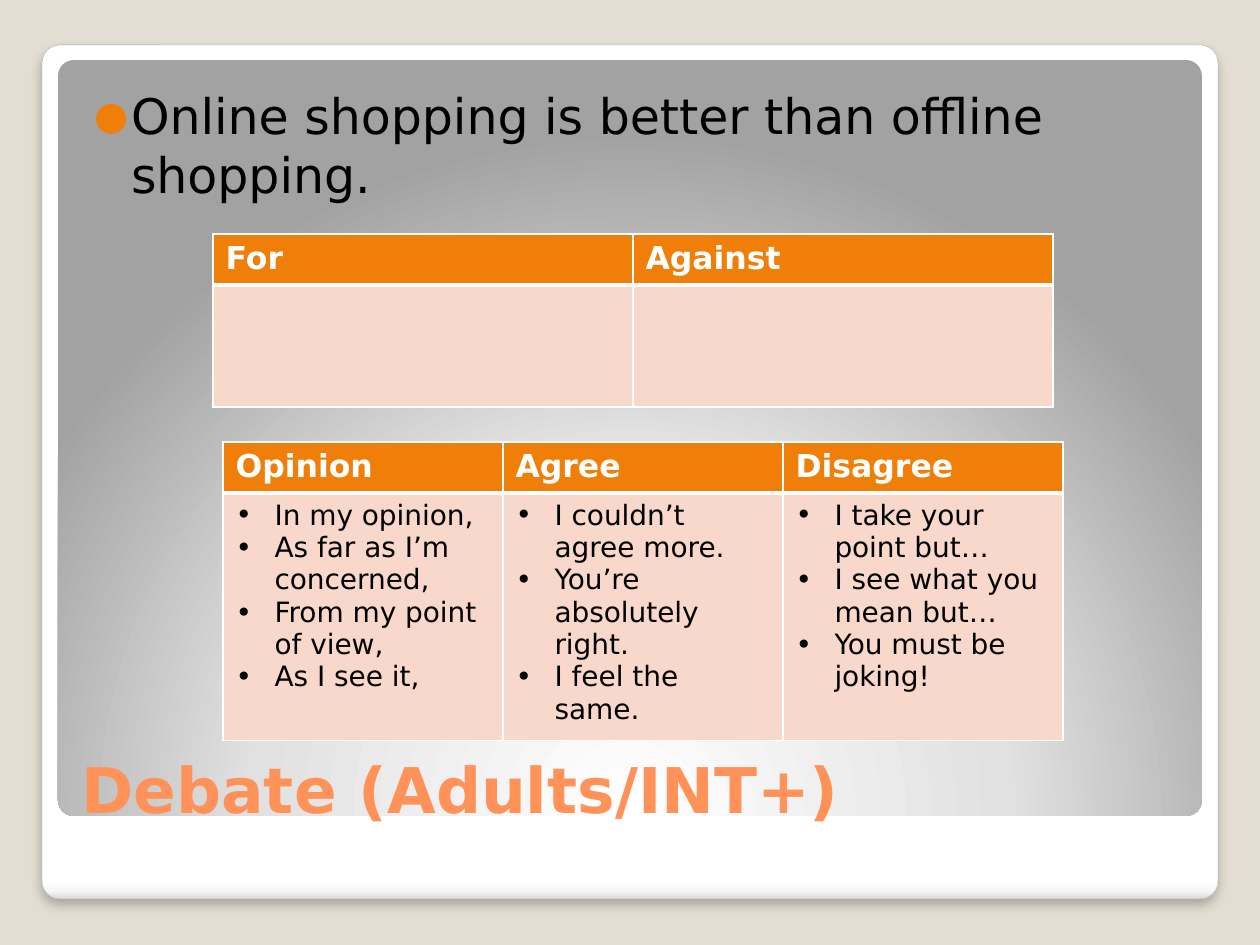
from dataclasses import dataclass

import pptx
import pptx.util
from lxml import etree
from pptx.dml.color import RGBColor
from pptx.enum.shapes import MSO_SHAPE
from pptx.enum.text import MSO_ANCHOR
from pptx.oxml import parse_xml
from pptx.oxml.ns import nsdecls, qn

PX = 914400 / 126
FONT = "DejaVu Sans"
SAND = RGBColor(0xE3, 0xDE, 0xD1)
GREY = RGBColor(0xA4, 0xA4, 0xA4)
ORANGE = RGBColor(0xF0, 0x7F, 0x09)
PEACH = RGBColor(0xFF, 0x92, 0x58)
PINK = RGBColor(0xF9, 0xD8, 0xCC)
WHITE = RGBColor(0xFF, 0xFF, 0xFF)
BLACK = RGBColor(0x00, 0x00, 0x00)


@dataclass(frozen=True)
class Box:
    left: int
    top: int
    width: int
    height: int

    def emu(self) -> tuple[int, ...]:
        return tuple(px(v) for v in (self.left, self.top, self.width, self.height))


@dataclass(frozen=True)
class Bullet:
    char: str
    indent: int
    color: RGBColor | None = None
    percent: int = 100


@dataclass(frozen=True)
class PhraseTable:
    box: Box
    header_height: int
    columns: dict[str, list[str]]


def px(value: int) -> int:
    return round(value * PX)


def add_bullet(paragraph, bullet: Bullet) -> None:
    props = paragraph._p.get_or_add_pPr()
    props.set("marL", str(px(bullet.indent)))
    props.set("indent", str(-px(bullet.indent)))
    if bullet.color is not None:
        color = etree.SubElement(props, qn("a:buClr"))
        etree.SubElement(color, qn("a:srgbClr"), val=str(bullet.color))
    etree.SubElement(props, qn("a:buSzPct"), val=str(bullet.percent * 1000))
    etree.SubElement(props, qn("a:buFont"), typeface=FONT)
    etree.SubElement(props, qn("a:buChar"), char=bullet.char)


def write_text(frame, lines: list[str], *, size: int, color: RGBColor,
               bold: bool = False, bullet: Bullet | None = None,
               space_before: float = 0) -> None:
    frame.word_wrap = True
    for i, line in enumerate(lines):
        paragraph = frame.paragraphs[0] if i == 0 else frame.add_paragraph()
        paragraph.space_before = pptx.util.Pt(space_before)
        if bullet:
            add_bullet(paragraph, bullet)
        run = paragraph.add_run()
        run.text = line
        run.font.name = FONT
        run.font.size = pptx.util.Pt(size)
        run.font.bold = bold
        run.font.color.rgb = color


def add_panel(slide, box: Box, stops: list[tuple[int, str]], direction: str):
    panel = slide.shapes.add_shape(MSO_SHAPE.ROUNDED_RECTANGLE, *box.emu())
    panel.adjustments[0] = 0.021
    panel.shadow.inherit = False
    panel.line.fill.background()
    colors = "".join(f'<a:gs pos="{pos * 1000}"><a:srgbClr val="{color}"/></a:gs>'
                     for pos, color in stops)
    gradient = parse_xml(f'<a:gradFill {nsdecls("a")} rotWithShape="1">'
                         f"<a:gsLst>{colors}</a:gsLst>{direction}</a:gradFill>")
    panel._element.spPr.find(qn("a:prstGeom")).addnext(gradient)
    return panel


def add_shadow(shape, blur: int, distance: int, opacity: int) -> None:
    effects = shape._element.spPr.find(qn("a:effectLst"))
    effects.append(parse_xml(
        f'<a:outerShdw {nsdecls("a")} blurRad="{pptx.util.Pt(blur)}" '
        f'dist="{pptx.util.Pt(distance)}" dir="5400000" algn="t" rotWithShape="0">'
        f'<a:srgbClr val="{BLACK}"><a:alpha val="{opacity * 1000}"/></a:srgbClr>'
        "</a:outerShdw>"))


def style_cell(cell, fill: RGBColor, top: int, bottom: int) -> None:
    cell.fill.solid()
    cell.fill.fore_color.rgb = fill
    props = cell._tc.get_or_add_tcPr()
    borders = {"lnL": 1, "lnR": 1, "lnT": top, "lnB": bottom}
    for i, (side, width) in enumerate(borders.items()):
        props.insert(i, parse_xml(
            f'<a:{side} {nsdecls("a")} w="{pptx.util.Pt(width)}"><a:solidFill>'
            f'<a:srgbClr val="{WHITE}"/></a:solidFill></a:{side}>'))


def add_phrase_table(slide, spec: PhraseTable) -> None:
    count = len(spec.columns)
    table = slide.shapes.add_table(2, count, *spec.box.emu()).table
    table.rows[0].height = px(spec.header_height)
    table.rows[1].height = px(spec.box.height - spec.header_height)
    for i, (heading, phrases) in enumerate(spec.columns.items()):
        table.columns[i].width = px(spec.box.width // count)
        header, body = table.cell(0, i), table.cell(1, i)
        style_cell(header, ORANGE, top=1, bottom=3)
        style_cell(body, PINK, top=3, bottom=1)
        write_text(header.text_frame, [heading], size=18, color=WHITE, bold=True)
        write_text(body.text_frame, phrases, size=16, color=BLACK,
                   bullet=Bullet("•", 39))


def add_text_box(slide, box: Box):
    return slide.shapes.add_textbox(*box.emu()).text_frame


TABLES = [
    PhraseTable(Box(213, 234, 840, 173), 51, {"For": [], "Against": []}),
    PhraseTable(Box(223, 442, 840, 290), 51, {
        "Opinion": ["In my opinion,", "As far as I’m concerned,",
                    "From my point of view,", "As I see it,"],
        "Agree": ["I couldn’t agree more.", "You’re absolutely right.",
                  "I feel the same."],
        "Disagree": ["I take your point but…", "I see what you mean but…",
                     "You must be joking!"],
    }),
]


def main() -> None:
    prs = pptx.Presentation()
    prs.slide_width, prs.slide_height = px(1260), px(945)
    slide = prs.slides.add_slide(prs.slide_layouts[6])
    slide.background.fill.solid()
    slide.background.fill.fore_color.rgb = SAND

    # White card and the grey panel on it
    card = add_panel(slide, Box(42, 45, 1176, 854),
                     [(0, "FFFFFF"), (98, "FFFFFF"), (99, "F7F7F7"), (100, "DADADA")],
                     '<a:lin ang="5400000" scaled="0"/>')
    card.line.color.rgb = GREY
    card.line.width = pptx.util.Pt(0.16)
    add_shadow(card, blur=6, distance=4, opacity=25)
    add_panel(slide, Box(58, 60, 1144, 756),
              [(0, "FFFFFF"), (55, "E1E1E1"), (100, "A2A2A2")],
              '<a:path path="circle"><a:fillToRect l="50000" t="175000" '
              'r="50000" b="-75000"/></a:path>')

    # Title
    title = add_text_box(slide, Box(69, 687, 1128, 145))
    title.vertical_anchor = MSO_ANCHOR.BOTTOM
    write_text(title, ["Debate (Adults/INT+)"], size=36, color=PEACH, bold=True)

    # Debate statement
    statement = add_text_box(slide, Box(69, 73, 1128, 577))
    statement.margin_left = px(25)
    statement.margin_top = px(13)
    write_text(statement, ["Online shopping is better than offline shopping."],
               size=28, color=BLACK, space_before=2.5,
               bullet=Bullet("●", 37, ORANGE, 80))

    # Argument and phrase tables
    for spec in TABLES:
        add_phrase_table(slide, spec)

    prs.save("out.pptx")


if __name__ == "__main__":
    main()
